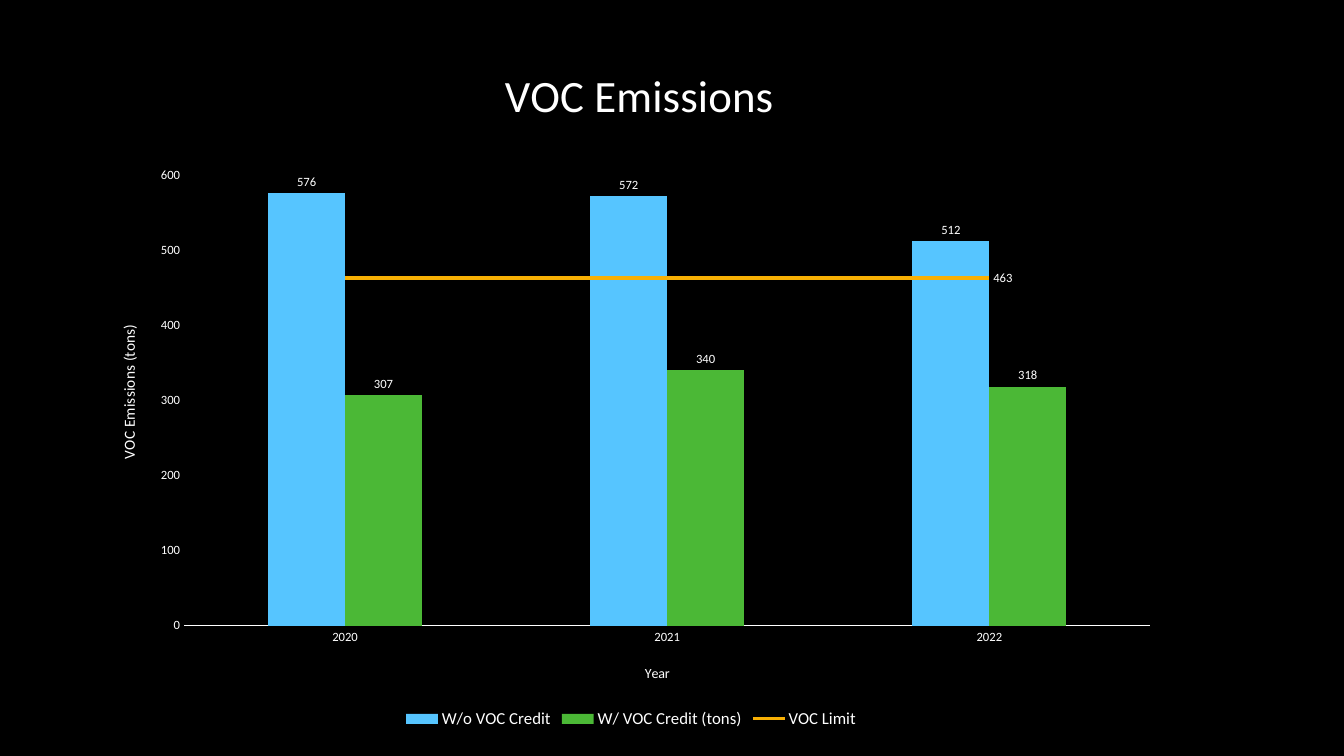
"""Build the VOC Emissions slide: clustered columns with a limit line."""
import pptx
import pptx.chart.data
import pptx.dml.color
import pptx.enum.chart
import pptx.oxml
import pptx.oxml.ns
import pptx.util

Inches = pptx.util.Inches
Pt = pptx.util.Pt
COLORS = {"black": "000000", "white": "FFFFFF", "blue": "56C5FF",
          "green": "4BB836", "amber": "F8B004"}
NS = pptx.oxml.ns.nsdecls("c")


def write(text, tf=None, font=None, size=10, color="white"):
    """Put text in a frame, if there is one, and format its font."""
    if tf is not None:
        r = tf.paragraphs[0].add_run()
        r.text = text
        font = r.font
    font.name = "Calibri"
    font.size = Pt(size)
    font.bold = False
    font.color.rgb = pptx.dml.color.RGBColor.from_string(COLORS[color])


def place(parent, index, **fractions):
    """Give a chart part a manual layout in fractions of the chart."""
    for old in parent.xpath("c:layout"):
        parent.remove(old)
    target = '<c:layoutTarget val="inner"/>' if "w" in fractions else ""
    modes = "".join(f'<c:{k}Mode val="edge"/>' for k in "xy")
    values = "".join(f'<c:{k} val="{v}"/>' for k, v in fractions.items())
    parent.insert(index, pptx.oxml.parse_xml(
        f"<c:layout {NS}><c:manualLayout>{target}{modes}{values}"
        "</c:manualLayout></c:layout>"))


prs = pptx.Presentation()
prs.slide_width, prs.slide_height = Inches(13.33), Inches(7.5)
s = prs.slides.add_slide(prs.slide_layouts[6])
s.background.fill.solid()
s.background.fill.fore_color.rgb = pptx.dml.color.RGBColor.from_string(COLORS["black"])

data = pptx.chart.data.CategoryChartData(number_format="#,##0")
data.categories = ["2020", "2021", "2022"]
data.add_series("W/o VOC Credit", [576, 572, 512])
data.add_series("W/ VOC Credit (tons)", [307, 340, 318])
data.add_series("VOC Limit", [463] * 3)
chart = s.shapes.add_chart(
    pptx.enum.chart.XL_CHART_TYPE.COLUMN_CLUSTERED,
    Inches(0.91), Inches(0.22), Inches(10.71), Inches(7.07), data).chart
root = chart.element
write("", font=chart.font)

bar = root.xpath(".//c:barChart")[0]
limit_ser = bar.xpath("c:ser")[2]
for flag in limit_ser.xpath("c:invertIfNegative"):
    limit_ser.remove(flag)
line = pptx.oxml.parse_xml(
    f'<c:lineChart {NS}><c:grouping val="standard"/><c:varyColors val="0"/>'
    '<c:marker val="1"/></c:lineChart>')
bar.addnext(line)
line.insert(2, limit_ser)
for ax_id in bar.xpath("c:axId"):
    line.append(pptx.oxml.parse_xml(f'<c:axId {NS} val="{ax_id.get("val")}"/>'))

columns, limits = chart.plots
columns.gap_width, columns.overlap = 219, 0
columns.vary_by_categories = False
for series, color in zip(columns.series, ["blue", "green"]):
    series.format.fill.solid()
    series.format.fill.fore_color.rgb = pptx.dml.color.RGBColor.from_string(COLORS[color])
    series.invert_if_negative = False
    labels = series.data_labels
    labels.show_value = True
    labels.number_format, labels.number_format_is_linked = "#,##0", False
    labels.position = pptx.enum.chart.XL_LABEL_POSITION.OUTSIDE_END
    write("", font=labels.font, size=9)

limit = limits.series[0]
limit.smooth = False
limit.marker.style = pptx.enum.chart.XL_MARKER_STYLE.NONE
limit.format.line.width = Pt(2.25)
limit.format.line.color.rgb = pptx.dml.color.RGBColor.from_string(COLORS["amber"])
limit.data_labels.show_value = False
last_label = limit.points[2].data_label
write("", font=last_label.font, size=9)
last_label.position = pptx.enum.chart.XL_LABEL_POSITION.RIGHT

years, tons = chart.category_axis, chart.value_axis
for axis, title, size in [(years, "Year", 10), (tons, "VOC Emissions (tons)", 11)]:
    axis.has_major_gridlines = False
    axis.major_tick_mark = axis.minor_tick_mark = pptx.enum.chart.XL_TICK_MARK.NONE
    write("", font=axis.tick_labels.font, size=9)
    write(title, tf=axis.axis_title.text_frame, size=size)
years.format.line.width = Pt(0.75)
years.format.line.color.rgb = pptx.dml.color.RGBColor.from_string(COLORS["white"])
tons.format.line.fill.background()
tons.minimum_scale, tons.maximum_scale, tons.major_unit = 0, 650, 100
tons.tick_labels.number_format, tons.tick_labels.number_format_is_linked = "0", False
turned = root.xpath(".//c:valAx/c:title//a:bodyPr")[0]
turned.set("rot", "-5400000")
turned.set("vert", "horz")

chart.has_title = True
write("VOC Emissions", tf=chart.chart_title.text_frame, size=32)
chart.has_legend = True
chart.legend.position = pptx.enum.chart.XL_LEGEND_POSITION.BOTTOM
chart.legend.include_in_layout = False
write("", font=chart.legend.font, size=12)

place(root.xpath(".//c:plotArea")[0], 0, x=0.0855, y=0.162, w=0.895, h=0.685)
place(root.xpath("c:chart/c:title")[0], 1, x=0.375, y=0.047)
place(root.xpath(".//c:catAx/c:title")[0], 1, x=0.51, y=0.898)
place(root.xpath(".//c:valAx/c:title")[0], 1, x=0.022, y=0.42)
place(root.xpath(".//c:legend")[0], 1, x=0.286, y=0.958)

prs.save("out.pptx")
